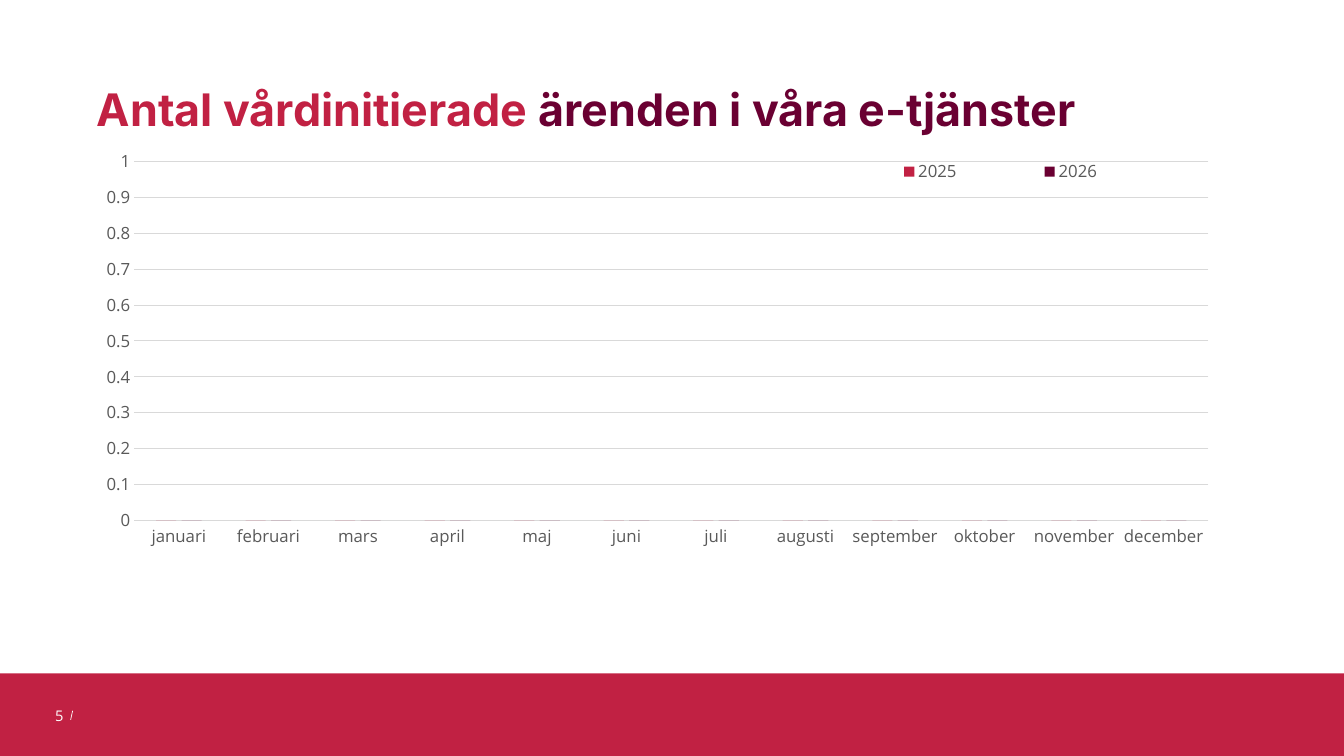
"""Build a slide on care-initiated cases per month, with a clustered column chart."""
from dataclasses import dataclass

from lxml.etree import SubElement
from pptx import Presentation
from pptx.chart.axis import CategoryAxis, ValueAxis
from pptx.chart.chart import Chart
from pptx.chart.data import CategoryChartData
from pptx.dml.color import RGBColor
from pptx.dml.line import LineFormat
from pptx.enum.chart import XL_CHART_TYPE, XL_LEGEND_POSITION, XL_TICK_MARK
from pptx.enum.shapes import MSO_CONNECTOR, MSO_SHAPE
from pptx.enum.text import MSO_ANCHOR, MSO_AUTO_SIZE, PP_ALIGN
from pptx.oxml import parse_xml
from pptx.oxml.ns import nsdecls, qn
from pptx.slide import Slide
from pptx.text.text import Font
from pptx.util import Cm, Pt

COLOURS = {
    "red": "C12143",
    "plum": "6A0032",
    "white": "FFFFFF",
    "black": "000000",
    "label": "595959",
    "grid": "D9D9D9",
}
MONTHS = ["januari", "februari", "mars", "april", "maj", "juni", "juli",
          "augusti", "september", "oktober", "november", "december"]


@dataclass(frozen=True)
class Box:
    """Left, top, width and height in centimetres."""
    left: float
    top: float
    width: float
    height: float

    def lengths(self) -> list[Cm]:
        """Return the four values as lengths."""
        return [Cm(v) for v in (self.left, self.top, self.width, self.height)]


@dataclass(frozen=True)
class TitlePart:
    """A coloured part of the title."""
    text: str
    colour: str


@dataclass(frozen=True)
class Year:
    """One year of monthly case counts."""
    name: str
    colour: str
    cases: tuple[int, ...]


TITLE = [
    TitlePart("Antal vårdinitierade", "red"),
    TitlePart(" ärenden i våra e-tjänster", "plum"),
]
YEARS = [
    Year("2025", "red", (0,) * len(MONTHS)),
    Year("2026", "plum", (0,) * len(MONTHS)),
]


def rgb(colour: str) -> RGBColor:
    """Look up a named colour."""
    return RGBColor.from_string(COLOURS[colour])


def style_font(font: Font, face: str, size: float, colour: str, bold: bool = False) -> None:
    """Set face, size, colour and weight."""
    font.name = face
    font.size = Pt(size)
    font.bold = bold
    font.color.rgb = rgb(colour)


def style_line(line: LineFormat, colour: str, width: float) -> None:
    """Set line colour and width."""
    line.color.rgb = rgb(colour)
    line.width = Pt(width)


def add_footer(slide: Slide) -> None:
    """Draw the footer band, the page number and its slanted stroke."""
    band = slide.shapes.add_shape(MSO_SHAPE.RECTANGLE, *Box(0, 16.97, 33.87, 2.08).lengths())
    band.shadow.inherit = False
    band.fill.solid()
    band.fill.fore_color.rgb = rgb("red")
    band.line.fill.background()

    stroke = slide.shapes.add_connector(
        MSO_CONNECTOR.STRAIGHT, Cm(1.83), Cm(17.91), Cm(1.78), Cm(18.14))
    style_line(stroke.line, "white", 0.5)
    SubElement(stroke._element.spPr, qn("a:effectLst"))

    page_frame = slide.shapes.add_textbox(*Box(0.76, 17.53, 1.09, 1.02).lengths()).text_frame
    page_frame.word_wrap = True
    page_frame.vertical_anchor = MSO_ANCHOR.MIDDLE
    page_line = page_frame.paragraphs[0]
    page_line.alignment = PP_ALIGN.RIGHT
    page_number = page_line.add_run()
    page_number.text = "5"
    style_font(page_number.font, "Open Sans", 10.5, "white")


def add_title(slide: Slide) -> None:
    """Place the title and write its coloured parts."""
    title = slide.shapes.title
    title.left, title.top, title.width, title.height = Box(2.44, 0.23, 27.97, 3.2).lengths()
    frame = title.text_frame
    frame.margin_left = frame.margin_top = frame.margin_right = frame.margin_bottom = 0
    frame.word_wrap = True
    frame.auto_size = MSO_AUTO_SIZE.NONE
    frame.vertical_anchor = MSO_ANCHOR.BOTTOM
    heading = frame.paragraphs[0]
    heading.alignment = PP_ALIGN.LEFT
    heading.line_spacing = 0.9
    for part in TITLE:
        run = heading.add_run()
        run.text = part.text
        style_font(run.font, "Inter", 32, part.colour, bold=True)


def set_layout(parent, index: int, area: tuple[float, ...], target: str = "") -> None:
    """Give a chart part a fixed place, as fractions of the chart."""
    for old in parent.findall(qn("c:layout")):
        parent.remove(old)
    layout = parse_xml(f"<c:layout {nsdecls('c')}><c:manualLayout/></c:layout>")
    settings = [("layoutTarget", target)] if target else []
    settings += [("xMode", "edge"), ("yMode", "edge")]
    settings += zip("xywh", map(str, area))
    for tag, value in settings:
        SubElement(layout[0], qn(f"c:{tag}")).set("val", value)
    parent.insert(index, layout)


def style_axis(axis: CategoryAxis | ValueAxis) -> None:
    """Remove tick marks and set the label font."""
    axis.major_tick_mark = axis.minor_tick_mark = XL_TICK_MARK.NONE
    style_font(axis.tick_labels.font, "Open Sans", 12, "label")


def style_axes(chart: Chart) -> None:
    """Format both axes and the gridlines."""
    style_axis(chart.category_axis)
    style_line(chart.category_axis.format.line, "grid", 0.75)
    scale = chart.value_axis
    style_axis(scale)
    scale.minimum_scale, scale.maximum_scale, scale.major_unit = 0, 1, 0.1
    scale.tick_labels.number_format = "General"
    scale.tick_labels.number_format_is_linked = False
    scale.format.line.fill.background()
    scale.has_major_gridlines = True
    style_line(scale.major_gridlines.format.line, "grid", 0.75)


def add_cases_chart(slide: Slide) -> None:
    """Add the chart of monthly cases per year."""
    cases = CategoryChartData()
    cases.categories = MONTHS
    for year in YEARS:
        cases.add_series(year.name, year.cases)
    chart = slide.shapes.add_chart(
        XL_CHART_TYPE.COLUMN_CLUSTERED, *Box(1.52, 3.78, 29.08, 12.12).lengths(), cases).chart
    style_font(chart.font, "Open Sans", 10, "black")
    chart.has_title = False
    style_axes(chart)

    columns = chart.plots[0]
    columns.gap_width, columns.overlap = 219, -27
    columns.vary_by_categories = False
    for year, series in zip(YEARS, columns.series):
        series.format.fill.solid()
        series.format.fill.fore_color.rgb = rgb(year.colour)

    chart.has_legend = True
    legend = chart.legend
    legend.position = XL_LEGEND_POSITION.BOTTOM
    legend.include_in_layout = False
    style_font(legend.font, "Open Sans", 12, "label")
    set_layout(legend._element, 1, (0.66, 0.02, 0.31, 0.05))
    set_layout(chart._chartSpace.chart.plotArea, 0, (0.064, 0.024, 0.931, 0.746), "inner")


def main() -> None:
    """Build and save the slide."""
    deck = Presentation()
    deck.slide_width, deck.slide_height = Cm(33.87), Cm(19.05)
    slide = deck.slides.add_slide(deck.slide_layouts[5])
    add_footer(slide)
    add_title(slide)
    add_cases_chart(slide)
    deck.save("out.pptx")


if __name__ == "__main__":
    main()
